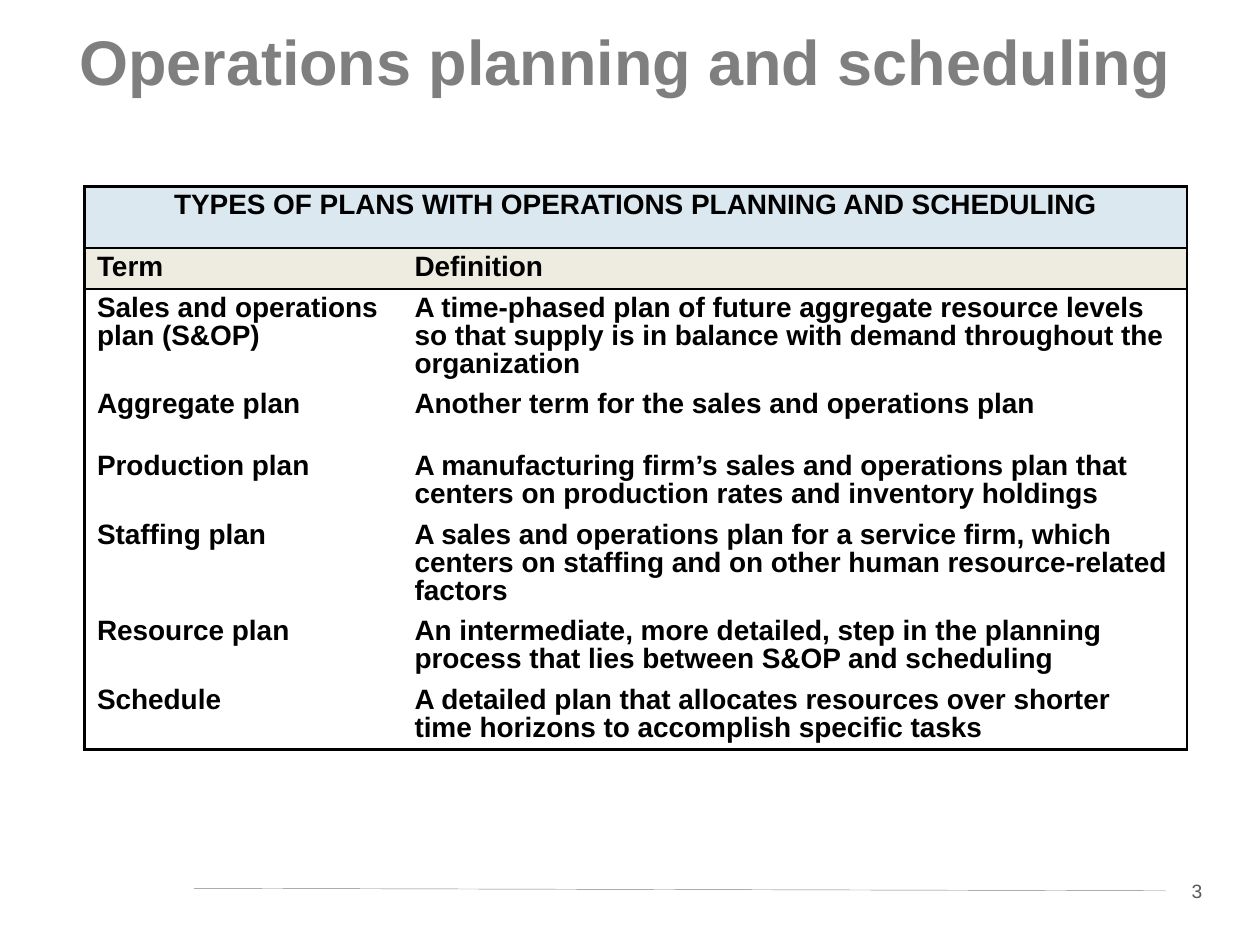
from lxml.etree import SubElement
from pptx import Presentation
from pptx.dml.color import RGBColor
from pptx.enum.shapes import MSO_CONNECTOR
from pptx.enum.text import MSO_ANCHOR, PP_ALIGN
from pptx.oxml import parse_xml
from pptx.oxml.ns import nsdecls, qn
from pptx.util import Inches, Pt

TITLE = "Operations planning and scheduling"
PAGE_NUMBER = "3"
HEADING = "TYPES OF PLANS WITH OPERATIONS PLANNING AND SCHEDULING"
PLANS = [
    ("Term", "Definition"),
    ("Sales and operations plan (S&OP)",
     "A time-phased plan of future aggregate resource levels so that supply "
     "is in balance with demand throughout the organization"),
    ("Aggregate plan", "Another term for the sales and operations plan"),
    ("Production plan",
     "A manufacturing firm’s sales and operations plan that centers on "
     "production rates and inventory holdings"),
    ("Staffing plan",
     "A sales and operations plan for a service firm, which centers on "
     "staffing and on other human resource-related factors"),
    ("Resource plan",
     "An intermediate, more detailed, step in the planning process that lies "
     "between S&OP and scheduling"),
    ("Schedule",
     "A detailed plan that allocates resources over shorter time horizons to "
     "accomplish specific tasks"),
]
THEME = {
    "font": "Arial",
    "title": "7F7F7F", "title_size": 36,
    "body": "000000", "body_size": 16, "body_leading": 16,
    "number": "595959", "number_size": 11, "number_fill": "FFFFFF",
    "heading_fill": "DBE8EF", "label_fill": "EEECE1",
    "rule": "808080", "rule_width": 0.25,
    "border": "000000", "border_width": 1.5,
}
COLUMN_WIDTHS = (2.52, 6.23)
ROW_HEIGHT, LABEL_HEIGHT = 0.49, 0.3


def write(frame, text, size, color, bold=False, align=PP_ALIGN.LEFT, leading=None):
    frame.word_wrap = True
    paragraph = frame.paragraphs[0]
    paragraph.alignment = align
    if leading:
        paragraph.line_spacing = Pt(leading)
    run = paragraph.add_run()
    run.text = text
    run.font.name = THEME["font"]
    run.font.size = Pt(size)
    run.font.bold = bold
    run.font.color.rgb = RGBColor.from_string(color)


def paint(fill, color):
    fill.solid()
    fill.fore_color.rgb = RGBColor.from_string(color)


def set_borders(cell, visible):
    properties = cell._tc.get_or_add_tcPr()
    for index, side in enumerate("LRTB"):
        line = parse_xml(f'<a:ln{side} {nsdecls("a")}/>')
        if side in visible:
            line.set("w", str(Pt(THEME["border_width"])))
            fill = SubElement(line, qn("a:solidFill"))
            SubElement(fill, qn("a:srgbClr"), val=THEME["border"])
        else:
            SubElement(line, qn("a:noFill"))
        properties.insert(index, line)


def add_plan_table(slide):
    rows = [(HEADING, "")] + PLANS
    heights = [LABEL_HEIGHT if row == 1 else ROW_HEIGHT for row in range(len(rows))]
    table = slide.shapes.add_table(
        len(rows), len(COLUMN_WIDTHS), Inches(0.67), Inches(1.48),
        Inches(sum(COLUMN_WIDTHS)), Inches(sum(heights))).table
    table.first_row = table.horz_banding = False
    for column, width in zip(table.columns, COLUMN_WIDTHS):
        column.width = Inches(width)
    for row, height in zip(table.rows, heights):
        row.height = Inches(height)
    table.cell(0, 0).merge(table.cell(0, 1))

    fills = {0: THEME["heading_fill"], 1: THEME["label_fill"]}
    for row, texts in enumerate(rows):
        for column, text in enumerate(texts):
            cell = table.cell(row, column)
            if row in fills:
                paint(cell.fill, fills[row])
            else:
                cell.fill.background()
            visible = "L" if column == 0 else "R"
            visible += "R" if row == 0 else ""
            visible += "T" if row <= 2 else ""
            visible += "B" if row in (0, 1, len(rows) - 1) else ""
            set_borders(cell, visible)
            if text:
                write(cell.text_frame, text, THEME["body_size"], THEME["body"],
                      bold=True, leading=THEME["body_leading"],
                      align=PP_ALIGN.CENTER if row == 0 else PP_ALIGN.LEFT)


def add_footer(slide):
    number = slide.shapes.add_textbox(
        Inches(9.25), Inches(6.93), Inches(0.5), Inches(0.29))
    paint(number.fill, THEME["number_fill"])
    write(number.text_frame, PAGE_NUMBER, THEME["number_size"], THEME["number"],
          align=PP_ALIGN.CENTER)
    rule = slide.shapes.add_connector(
        MSO_CONNECTOR.STRAIGHT, Inches(1.54), Inches(7.05), Inches(9.25), Inches(7.07))
    rule.line.color.rgb = RGBColor.from_string(THEME["rule"])
    rule.line.width = Pt(THEME["rule_width"])
    SubElement(rule._element.spPr, qn("a:effectLst"))


def main():
    presentation = Presentation()
    presentation.slide_width, presentation.slide_height = Inches(10), Inches(7.5)
    slide = presentation.slides.add_slide(presentation.slide_layouts[6])
    add_footer(slide)
    title = slide.shapes.add_textbox(
        Inches(0.53), Inches(0.13), Inches(8.94), Inches(1.01))
    title.text_frame.vertical_anchor = MSO_ANCHOR.TOP
    write(title.text_frame, TITLE, THEME["title_size"], THEME["title"], bold=True)
    add_plan_table(slide)
    presentation.save("out.pptx")


if __name__ == "__main__":
    main()
